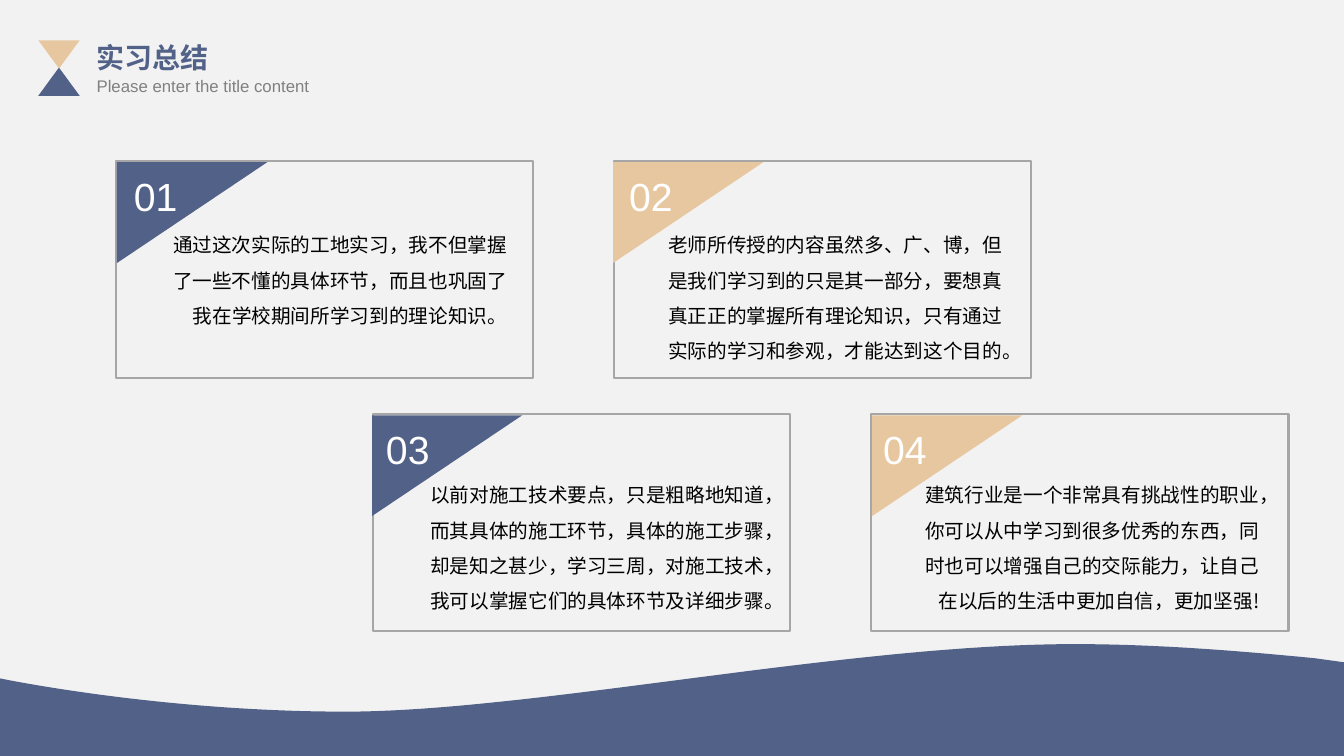
from lxml import etree
from pptx import Presentation
from pptx.dml.color import RGBColor
from pptx.enum.shapes import MSO_SHAPE
from pptx.enum.text import MSO_ANCHOR, PP_ALIGN
from pptx.oxml.ns import qn
from pptx.util import Inches, Pt

RECTANGLE = MSO_SHAPE.RECTANGLE
TRIANGLE = MSO_SHAPE.ISOSCELES_TRIANGLE
RIGHT_TRIANGLE = MSO_SHAPE.RIGHT_TRIANGLE
LEFT, RIGHT, JUSTIFY = PP_ALIGN.LEFT, PP_ALIGN.RIGHT, PP_ALIGN.JUSTIFY
TOP = MSO_ANCHOR.TOP

COLORS = {
    "background": "F2F2F2", "blue": "526188", "sand": "E7C7A0",
    "border": "A6A6A6", "subtitle": "808080", "white": "FFFFFF", "black": "000000",
}
LATIN, CHINESE = "Arial", "Noto Sans CJK SC"

TITLE = "实习总结"
SUBTITLE = "Please enter the title content"

# number, colour, card left, card top, corner inset, number inset, body inset x, body inset y
CARDS = [
    ("01", "blue", 1.15, 1.6, 0.01, 0.08, 0.44, 0.55,
     "通过这次实际的工地实习，我不但掌握了一些不懂的具体环节，而且也巩固了我在学校期间所学习到的理论知识。"),
    ("02", "sand", 6.09, 1.6, -0.01, 0.05, 0.41, 0.55,
     "老师所传授的内容虽然多、广、博，但是我们学习到的只是其一部分，要想真真正正的掌握所有理论知识，"
     "只有通过实际的学习和参观，才能达到这个目的。"),
    ("03", "blue", 3.7, 4.11, -0.01, 0.03, 0.44, 0.52,
     "以前对施工技术要点，只是粗略地知道，而其具体的施工环节，具体的施工步骤，却是知之甚少，"
     "学习三周，对施工技术，我可以掌握它们的具体环节及详细步骤。"),
    ("04", "sand", 8.64, 4.11, 0.01, 0.02, 0.41, 0.52,
     "建筑行业是一个非常具有挑战性的职业，你可以从中学习到很多优秀的东西，同时也可以增强自己的交际能力，"
     "让自己在以后的生活中更加自信，更加坚强!"),
]
CARD_W, CARD_H = 4.14, 2.15
CORNER_W, CORNER_H = 1.49, 1

WAVE_START = (13.33, 6.57)
WAVE_CURVES = [
    ((13.04, 6.53), (12.32, 6.46), (11.49, 6.39), (10.65, 6.39)),
    ((10.65, 6.39), (8.4, 6.39), (5.28, 7.06), (3.43, 7.06)),
    ((3.43, 7.06), (1.57, 7.06), (0, 6.73), (0, 6.73)),
]
WAVE_BASE = [(0, 7.5), (13.33, 7.5)]
CURVE_STEPS = 40


def color(name):
    return RGBColor.from_string(COLORS[name])


def curve_points(p0, p1, p2, p3):
    for step in range(CURVE_STEPS + 1):
        t = step / CURVE_STEPS
        u = 1 - t
        yield tuple(u**3 * a + 3 * u * u * t * b + 3 * u * t * t * c + t**3 * d
                    for a, b, c, d in zip(p0, p1, p2, p3))


def paint(shape, fill=None, border=None):
    shape.shadow.inherit = False
    if fill:
        shape.fill.solid()
        shape.fill.fore_color.rgb = color(fill)
    else:
        shape.fill.background()
    if border:
        shape.line.color.rgb = color(border)
        shape.line.width = Pt(1.5)
    else:
        shape.line.fill.background()


def add_shape(preset, left, top, width, height, fill=None, border=None, rotation=0):
    shape = slide.shapes.add_shape(preset, *map(Inches, (left, top, width, height)))
    shape.rotation = rotation
    paint(shape, fill, border)


def write(box, text, size, ink, font=LATIN, align=LEFT, bold=False, spacing=1.0):
    frame = box.text_frame
    frame.text = text
    frame.word_wrap = True
    frame.vertical_anchor = TOP
    paragraph = frame.paragraphs[0]
    paragraph.alignment = align
    paragraph.line_spacing = spacing
    run = paragraph.runs[0]
    run.font.name = font
    run.font.size = Pt(size)
    run.font.bold = bold
    run.font.color.rgb = color(ink)
    etree.SubElement(run.font._element, qn("a:ea"), typeface=CHINESE)


def add_text(left, top, width, height, *args, **kwargs):
    box = slide.shapes.add_textbox(*map(Inches, (left, top, width, height)))
    write(box, *args, **kwargs)


deck = Presentation()
deck.slide_width, deck.slide_height = Inches(13.33), Inches(7.5)
slide = deck.slides.add_slide(deck.slide_layouts[5])
slide.background.fill.solid()
slide.background.fill.fore_color.rgb = color("background")

outline = [point for curve in WAVE_CURVES for point in curve_points(*curve)] + WAVE_BASE
builder = slide.shapes.build_freeform(*map(Inches, WAVE_START))
builder.add_line_segments([(Inches(x), Inches(y)) for x, y in outline], close=True)
paint(builder.convert_to_shape(), "blue")

add_shape(TRIANGLE, 0.38, 0.67, 0.41, 0.28, "blue")
add_shape(TRIANGLE, 0.38, 0.4, 0.41, 0.28, "sand", rotation=180)

title = slide.shapes.title
title.left, title.top, title.width, title.height = map(Inches, (0.86, 0.35, 1.79, 0.44))
write(title, TITLE, 20, "blue", align=JUSTIFY, bold=True)
add_text(0.86, 0.7, 2.64, 0.3, SUBTITLE, 12, "subtitle", align=JUSTIFY)

turn_shift = (CORNER_W - CORNER_H) / 2
for number, accent, left, top, corner_dx, number_dx, body_dx, body_dy, body in CARDS:
    add_shape(RECTANGLE, left, top, CARD_W, CARD_H, border="border")
    add_shape(RIGHT_TRIANGLE, left + corner_dx + turn_shift, top + 0.01 - turn_shift,
              CORNER_H, CORNER_W, accent, rotation=90)
    add_text(left + number_dx, top + 0.06, 1.52, 0.57, number, 28, "white")
    add_text(left + body_dx, top + body_dy, 3.54, 1.47, body, 14, "black",
             font=CHINESE, align=RIGHT, spacing=1.5)

deck.save("out.pptx")
